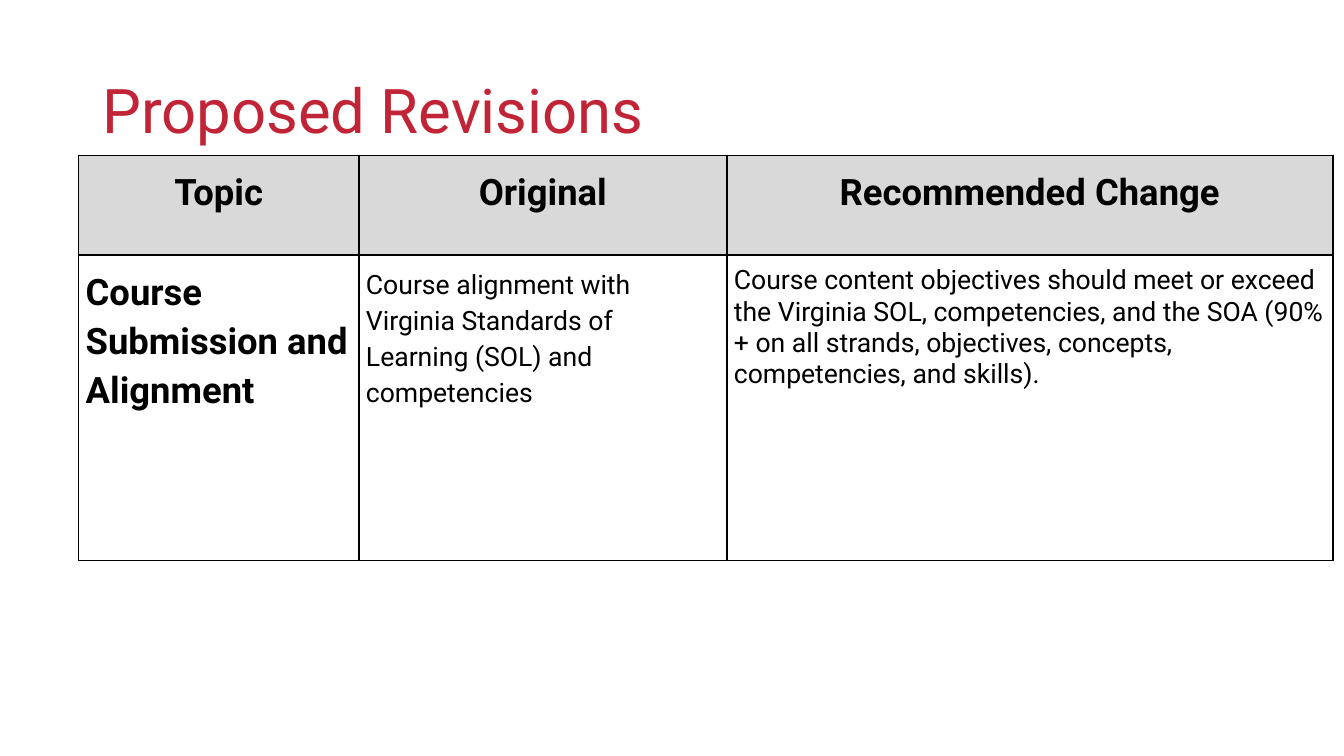
"""Build the Proposed Revisions slide: a title above a three-column table."""
from lxml.etree import SubElement
from pptx import Presentation
from pptx.dml.color import RGBColor
from pptx.enum.text import MSO_ANCHOR, PP_ALIGN
from pptx.oxml.ns import qn
from pptx.util import Emu, Inches, Pt

COLORS = {"title": "C12436", "text": "000000", "header": "D9D9D9", "border": "000000"}
FONT = "Roboto"
COLUMN_SHARES = [0.2086, 0.2738, 0.4509]
ROW_SHARES = [0.132, 0.404]
ROWS = [
    [("Topic", 26, True, 1.15), ("Original", 26, True, 1.15),
     ("Recommended Change", 26, True, 1.15)],
    [("Course Submission and Alignment", 26, True, 1.15),
     ("Course alignment with Virginia Standards of Learning (SOL) and competencies",
      19, False, 1.15),
     ("Course content objectives should meet or exceed the Virginia SOL, competencies, "
      "and the SOA (90%+ on all strands, objectives, concepts, competencies, and skills).",
      19, False, 1.0)],
]


def write(frame, text, size, color, bold, spacing, align):
    frame.word_wrap = True
    frame.text = text
    para = frame.paragraphs[0]
    para.alignment = align
    para.line_spacing = spacing
    font = para.runs[0].font
    font.name, font.size, font.bold = FONT, Pt(size), bold
    font.color.rgb = RGBColor.from_string(COLORS[color])


def add_borders(cell):
    properties = cell._tc.get_or_add_tcPr()
    for index, side in enumerate(("a:lnL", "a:lnR", "a:lnT", "a:lnB")):
        line = SubElement(properties, qn(side), w=str(Pt(1)))
        properties.insert(index, line)
        fill = SubElement(line, qn("a:solidFill"))
        SubElement(fill, qn("a:srgbClr"), val=COLORS["border"])


deck = Presentation()
deck.slide_width, deck.slide_height = Inches(13.33), Inches(7.5)
width, height = deck.slide_width, deck.slide_height
page = deck.slides.add_slide(deck.slide_layouts[6])

column_widths = [Emu(int(width * share)) for share in COLUMN_SHARES]
row_heights = [Emu(int(height * share)) for share in ROW_SHARES]

title = page.shapes.add_textbox(Inches(0.92), Inches(0.4), Inches(11.5), Inches(1.45))
title.text_frame.vertical_anchor = MSO_ANCHOR.MIDDLE
write(title.text_frame, "Proposed Revisions", 44, "title", False, 0.9, PP_ALIGN.LEFT)

table = page.shapes.add_table(
    len(ROWS), len(COLUMN_SHARES), Inches(0.78), Inches(1.54),
    sum(column_widths), sum(row_heights)).table
table.first_row = table.horz_banding = False
for column, column_width in zip(table.columns, column_widths):
    column.width = column_width

for row_index, entries in enumerate(ROWS):
    is_header = row_index == 0
    table.rows[row_index].height = row_heights[row_index]
    for column_index, (text, size, bold, spacing) in enumerate(entries):
        cell = table.cell(row_index, column_index)
        cell.margin_left = cell.margin_right = Inches(0.07)
        cell.margin_top = cell.margin_bottom = Inches(0.1)
        if is_header:
            cell.fill.solid()
            cell.fill.fore_color.rgb = RGBColor.from_string(COLORS["header"])
        else:
            cell.fill.background()
        write(cell.text_frame, text, size, "text", bold, spacing,
              PP_ALIGN.CENTER if is_header else PP_ALIGN.LEFT)
        add_borders(cell)

deck.save("out.pptx")
